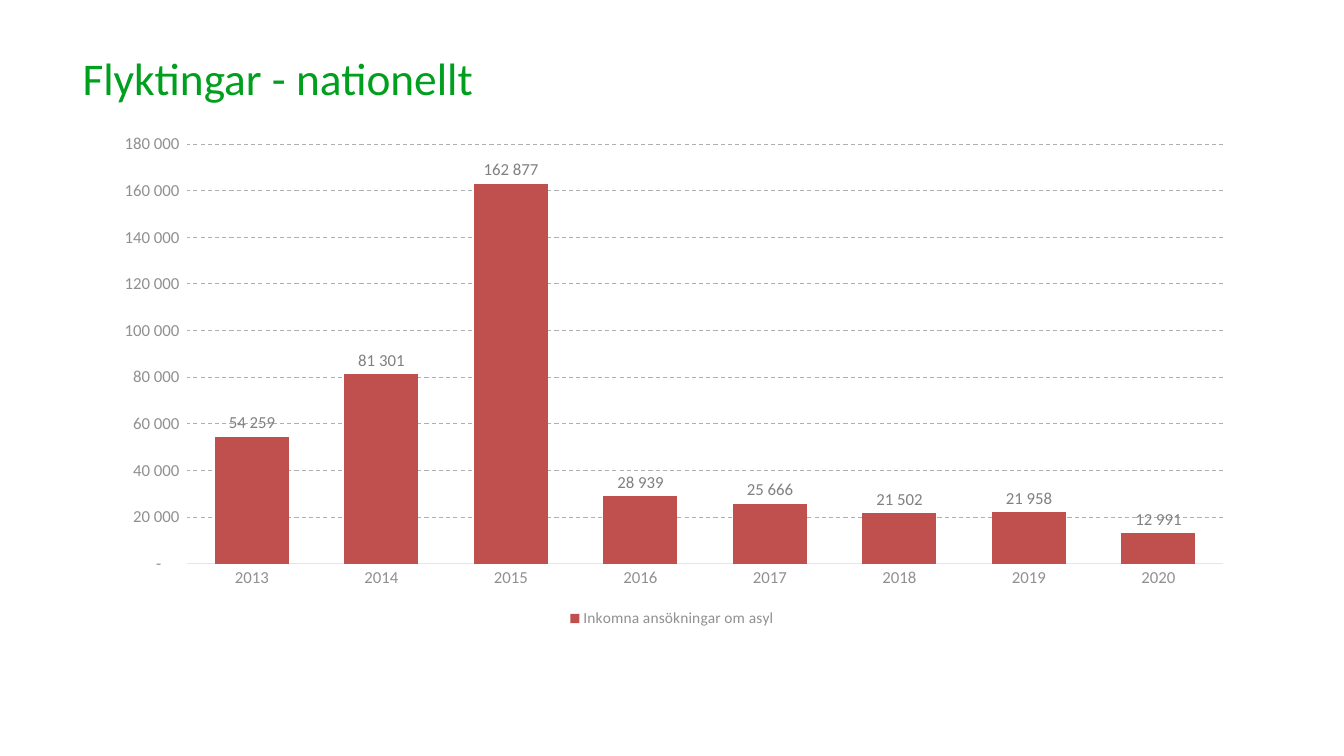
from pptx import Presentation
from pptx import util as u
from pptx.chart.data import CategoryChartData
from pptx.dml.color import RGBColor
from pptx.enum import chart as ch, dml, text


def rgb(code):
    return RGBColor.from_string(code)


class Deck:
    """Hold the style and the current slide."""

    face = "Calibri"
    green, red = "00A01E", "C0504D"
    base, gray, label = "555555", "909090", "808080"
    axis, grid = "E6E6E6", "AFAFAF"

    def __init__(self, slide):
        self.slide = slide

    def put(self, item, **vals):
        for key, val in vals.items():
            setattr(item, key, val)

    def style(self, font, size, color):
        self.put(font, name=self.face, size=u.Pt(size), bold=False)
        font.color.rgb = rgb(color)

    def rule(self, line, color):
        line.color.rgb = rgb(color)
        line.width = u.Pt(0.75)

    def title(self, words, *box):
        frame = self.slide.shapes.add_textbox(*map(u.Inches, box)).text_frame
        self.put(frame, word_wrap=True, margin_bottom=0,
                 vertical_anchor=text.MSO_ANCHOR.BOTTOM)
        para = frame.paragraphs[0]
        para.space_after = u.Pt(6)
        run = para.add_run()
        run.text = words
        self.style(run.font, 32.4, self.green)

    def columns(self, name, cats, vals, *box):
        data = CategoryChartData(number_format="#\\ ##0")
        data.categories = cats
        data.add_series(name, vals)
        chart = self.slide.shapes.add_chart(
            ch.XL_CHART_TYPE.COLUMN_CLUSTERED, *map(u.Inches, box), data).chart
        self.style(chart.font, 11, self.base)
        self.put(chart, has_title=False, has_legend=True)
        self.put(chart.legend, include_in_layout=False,
                 position=ch.XL_LEGEND_POSITION.BOTTOM)
        self.style(chart.legend.font, 11, self.gray)
        self.axes(chart)
        self.bars(chart.plots[0])

    def axes(self, chart):
        cat, val = chart.category_axis, chart.value_axis
        none = ch.XL_TICK_MARK.NONE
        for axis in (cat, val):
            self.put(axis, major_tick_mark=none, minor_tick_mark=none)
            self.style(axis.tick_labels.font, 12, self.gray)
        self.rule(cat.format.line, self.axis)
        val.format.line.fill.background()
        self.put(val, minimum_scale=0, maximum_scale=180000,
                 major_unit=20000, has_major_gridlines=True)
        grid = val.major_gridlines.format.line
        self.rule(grid, self.grid)
        grid.dash_style = dml.MSO_LINE.DASH
        self.put(val.tick_labels, number_format_is_linked=False,
                 number_format='_-* #\\ ##0_-;\\-* #\\ ##0_-;_-* "-"??_-;_-')

    def bars(self, plot):
        self.put(plot, gap_width=75, overlap=-27, vary_by_categories=False,
                 has_data_labels=True)
        fill = plot.series[0].format.fill
        fill.solid()
        fill.fore_color.rgb = rgb(self.red)
        tags = plot.data_labels
        self.put(tags, show_value=True, number_format="#\\ ##0",
                 number_format_is_linked=False,
                 position=ch.XL_LABEL_POSITION.OUTSIDE_END)
        self.style(tags.font, 12, self.label)


def main():
    show = Presentation()
    show.slide_width, show.slide_height = u.Inches(13.33), u.Inches(7.5)
    deck = Deck(show.slides.add_slide(show.slide_layouts[6]))
    deck.title("Flyktingar - nationellt", 0.72, 0.42, 11.39, 0.62)
    years = [str(year) for year in range(2013, 2021)]
    counts = [54259, 81301, 162877, 28939, 25666, 21502, 21958, 12991]
    deck.columns("Inkomna ansökningar om asyl", years, counts,
                 0.97, 1.23, 11.39, 5.04)
    show.save("out.pptx")


if __name__ == "__main__":
    main()
